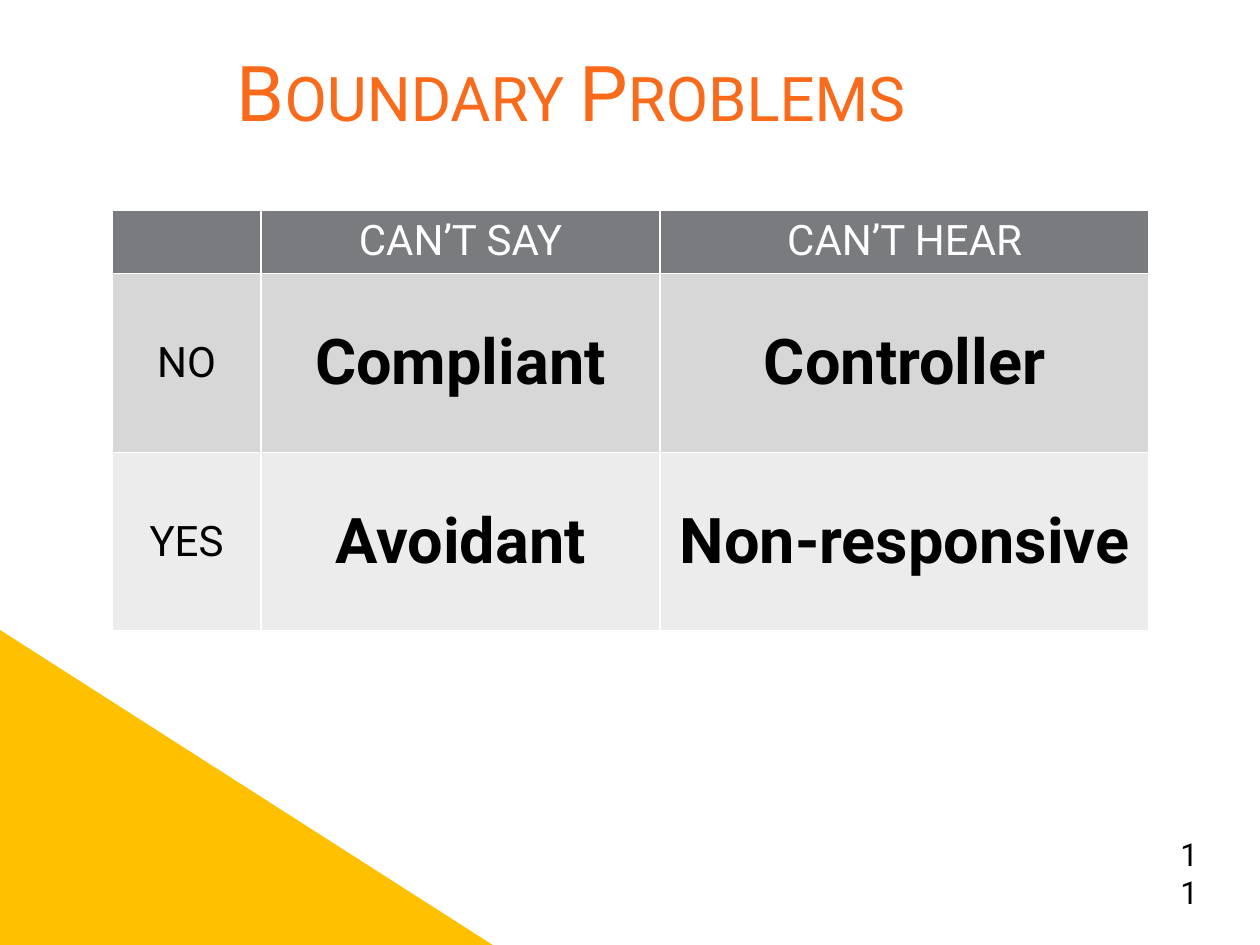
from pptx import Presentation
from pptx.dml.color import RGBColor as RGB
from pptx.enum.shapes import MSO_SHAPE as Kind
from pptx.enum.text import MSO_ANCHOR as Anchor, PP_ALIGN as Align
from pptx.util import Inches, Pt

HUES = {"title": "F96A1B", "wedge": "FFC000", "head": "797B7E",
        "odd": "D7D7D8", "even": "ECECEC", "black": "000000", "white": "FFFFFF"}


def hue(name):
    return RGB.from_string(HUES[name])


def write(frame, text, size, color, align=Align.CENTER, bold=False):
    para = frame.paragraphs[0]
    para.alignment = align
    run = para.add_run()
    run.text = text
    look = {"name": "Roboto", "size": Pt(size), "bold": bold}
    for key, value in look.items():
        setattr(run.font, key, value)
    run.font.color.rgb = hue(color)
    return run


deck = Presentation()
deck.slide_width, deck.slide_height = Inches(10), Inches(7.5)
slide = deck.slides.add_slide(deck.slide_layouts[6])
shapes = slide.shapes

# Page number in an unfilled circle
badge = shapes.add_shape(Kind.OVAL, Inches(9.19), Inches(6.5), Inches(0.55), Inches(0.55))
badge.shadow.inherit = False
badge.fill.background()
badge.line.fill.background()
badge.text_frame.word_wrap = True
badge.text_frame.vertical_anchor = Anchor.TOP
write(badge.text_frame, "11", 18, "black", Align.LEFT)

# Corner wedge
wedge = shapes.add_shape(Kind.RIGHT_TRIANGLE, 0, Inches(5), Inches(3.91), Inches(2.5))
wedge.shadow.inherit = False
wedge.fill.solid()
wedge.fill.fore_color.rgb = hue("wedge")
wedge.line.fill.background()

# Title in small capitals
title = shapes.add_textbox(Inches(0.42), Inches(0.42), Inches(8.22), Inches(0.6)).text_frame
title.word_wrap = True
title.vertical_anchor = Anchor.MIDDLE
run = write(title, "Boundary Problems", 44, "title")
run.font._element.set("cap", "small")

# Table; its default style draws the white rules
ROWS = [
    ("head", 0.5, ["", "CAN’T SAY", "CAN’T HEAR"]),
    ("odd", 1.42, ["NO", "Compliant", "Controller"]),
    ("even", 1.42, ["YES", "Avoidant", "Non-responsive"]),
]
WIDTHS = [1.18, 3.17, 3.88]
table = shapes.add_table(len(ROWS), len(WIDTHS), Inches(0.89), Inches(1.67),
                         Inches(sum(WIDTHS)), Inches(3.33)).table
for col, width in zip(table.columns, WIDTHS):
    col.width = Inches(width)
for r, (shade, height, words) in enumerate(ROWS):
    table.rows[r].height = Inches(height)
    head = r == 0
    for c, word in enumerate(words):
        cell = table.cell(r, c)
        cell.fill.solid()
        cell.fill.fore_color.rgb = hue(shade)
        cell.vertical_anchor = Anchor.TOP if head else Anchor.MIDDLE
        if word:
            big = not head and c > 0
            write(cell.text_frame, word, 36 if big else 24,
                  "white" if head else "black", bold=big)

deck.save("out.pptx")
